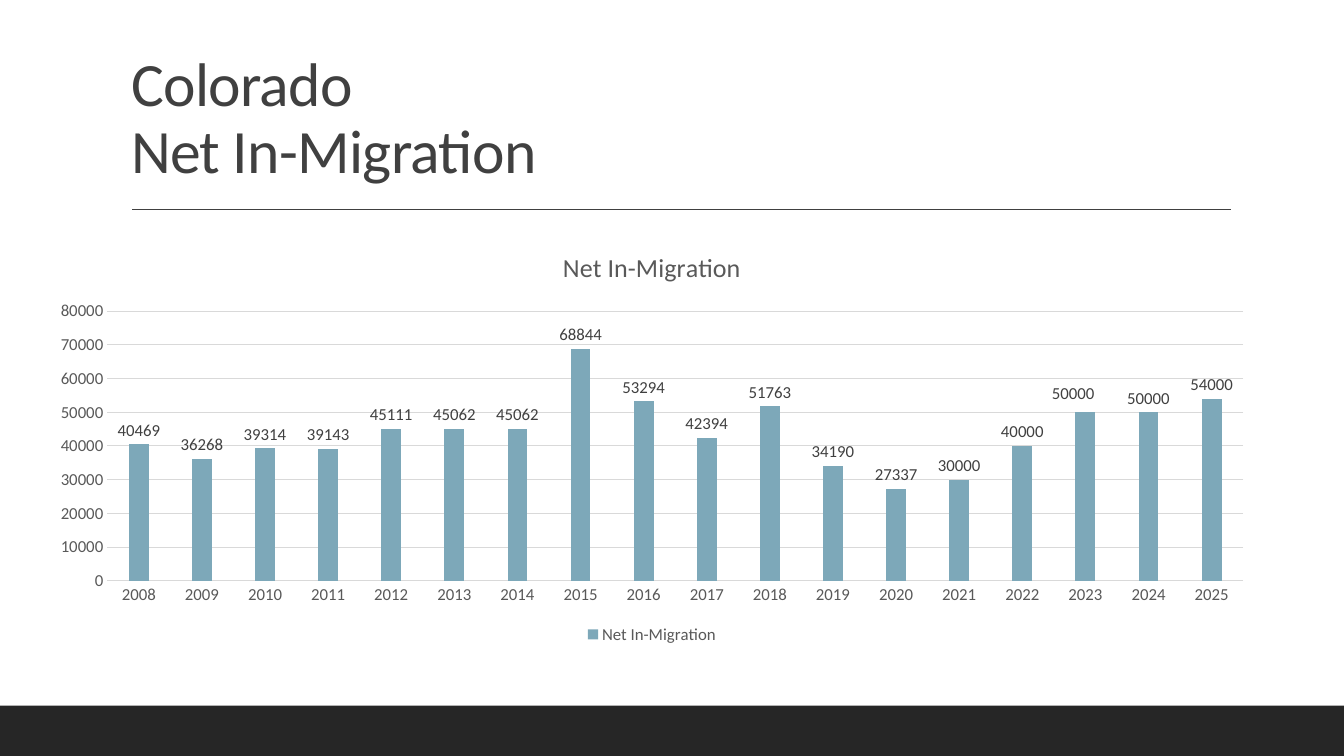
from dataclasses import dataclass

from lxml import etree
from pptx import Presentation
from pptx.chart.data import CategoryChartData
from pptx.dml.color import RGBColor
from pptx.enum.chart import XL_CHART_TYPE, XL_LABEL_POSITION, XL_LEGEND_POSITION, XL_TICK_MARK
from pptx.enum.shapes import MSO_CONNECTOR, MSO_SHAPE
from pptx.enum.text import MSO_ANCHOR, MSO_AUTO_SIZE, PP_ALIGN
from pptx.oxml.ns import qn
from pptx.util import Cm, Pt

COLUMN = XL_CHART_TYPE.COLUMN_CLUSTERED
ABOVE = XL_LABEL_POSITION.OUTSIDE_END
BOTTOM = XL_LEGEND_POSITION.BOTTOM
NO_TICK = XL_TICK_MARK.NONE
STRAIGHT = MSO_CONNECTOR.STRAIGHT
RECT = MSO_SHAPE.RECTANGLE
LOW = MSO_ANCHOR.BOTTOM
FIXED = MSO_AUTO_SIZE.NONE
LEFT = PP_ALIGN.LEFT


@dataclass(frozen=True)
class Theme:
    font: str = "Calibri"
    paper: str = "FFFFFF"
    dark: str = "404040"
    band: str = "262626"
    gray: str = "595959"
    grid: str = "D9D9D9"
    bar: str = "7DA8B9"
    head: float = 44
    chart: float = 18.6
    label: float = 12


def apply(item, form):
    for name, value in form.items():
        setattr(item, name, value)


def paint(fill, color):
    fill.solid()
    fill.fore_color.rgb = RGBColor.from_string(color)


def box(*sides):
    return [Cm(side) for side in sides]


class Page:
    def __init__(self, deck, theme):
        self.theme = theme
        self.slide = deck.slides.add_slide(deck.slide_layouts[5])
        paint(self.slide.background.fill, theme.paper)

    def style(self, font, size, color):
        apply(font, {"name": self.theme.font, "size": Pt(size), "bold": False})
        font.color.rgb = RGBColor.from_string(color)

    def stroke(self, line, color, width):
        paint(line.fill, color)
        line.width = Pt(width)

    def title(self, text, *sides):
        shape = self.slide.shapes.title
        apply(shape, dict(zip(("left", "top", "width", "height"), box(*sides))))
        frame = shape.text_frame
        apply(frame, {"word_wrap": True, "auto_size": FIXED, "vertical_anchor": LOW})
        para = frame.paragraphs[0]
        apply(para, {"text": text, "alignment": LEFT, "line_spacing": 0.9})
        for run in para.runs:
            self.style(run.font, self.theme.head, self.theme.dark)
            run.font._element.set("spc", "-50")

    def rule(self, *ends):
        line = self.slide.shapes.add_connector(STRAIGHT, *box(*ends))
        self.stroke(line.line, self.theme.dark, 1)
        etree.SubElement(line._element.spPr, qn("a:effectLst"))

    def band(self, *sides):
        shape = self.slide.shapes.add_shape(RECT, *box(*sides))
        shape.shadow.inherit = False
        paint(shape.fill, self.theme.band)
        shape.line.fill.background()

    def chart(self, name, years, counts, *sides):
        theme = self.theme
        data = CategoryChartData()
        data.categories = years
        data.add_series(name, counts)
        chart = self.slide.shapes.add_chart(COLUMN, *box(*sides), data).chart
        self.style(chart.font, theme.label, theme.gray)
        chart.has_title = True
        frame = chart.chart_title.text_frame
        frame.text = name
        self.style(frame.paragraphs[0].runs[0].font, theme.chart, theme.gray)
        chart.chart_title.include_in_layout = False
        chart.has_legend = True
        apply(chart.legend, {"position": BOTTOM, "include_in_layout": False})
        self.style(chart.legend.font, theme.label, theme.gray)
        for axis in (chart.category_axis, chart.value_axis):
            apply(axis, {"major_tick_mark": NO_TICK, "minor_tick_mark": NO_TICK})
            self.style(axis.tick_labels.font, theme.label, theme.gray)
        self.stroke(chart.category_axis.format.line, theme.grid, 0.75)
        axis = chart.value_axis
        apply(axis, {"minimum_scale": 0, "maximum_scale": 80000, "major_unit": 10000})
        axis.format.line.fill.background()
        self.stroke(axis.major_gridlines.format.line, theme.grid, 0.75)
        plot = chart.plots[0]
        apply(plot, {"gap_width": 219, "overlap": -27, "vary_by_categories": False})
        series = plot.series[0]
        paint(series.format.fill, theme.bar)
        labels = series.data_labels
        apply(labels, {"show_value": True, "position": ABOVE})
        self.style(labels.font, theme.label, theme.dark)
        return series

    def nudge(self, series, index, **shift):
        label = series.points[index].data_label
        self.style(label.font, self.theme.label, self.theme.dark)
        label.position = ABOVE
        mark = series.data_labels._element.find(qn("c:dLbl"))
        layout = etree.Element(qn("c:layout"))
        manual = etree.SubElement(layout, qn("c:manualLayout"))
        for side, value in shift.items():
            etree.SubElement(manual, qn(f"c:{side}")).set("val", str(value))
        mark.find(qn("c:idx")).addnext(layout)


def main():
    deck = Presentation()
    apply(deck, {"slide_width": Cm(33.87), "slide_height": Cm(19.05)})
    page = Page(deck, Theme())
    page.title("Colorado \vNet In-Migration", 3.05, 0.79, 27.94, 4.04)
    page.rule(3.33, 5.28, 31.01, 5.28)
    page.band(0, 17.78, 33.87, 1.27)
    years = [str(year) for year in range(2008, 2026)]
    counts = [40469, 36268, 39314, 39143, 45111, 45062, 45062, 68844, 53294,
              42394, 51763, 34190, 27337, 30000, 40000, 50000, 50000, 54000]
    series = page.chart("Net In-Migration", years, counts, 0.91, 5.82, 31.04, 10.52)
    page.nudge(series, years.index("2023"), x=-0.01, y=-0.01)
    deck.save("out.pptx")


if __name__ == "__main__":
    main()
